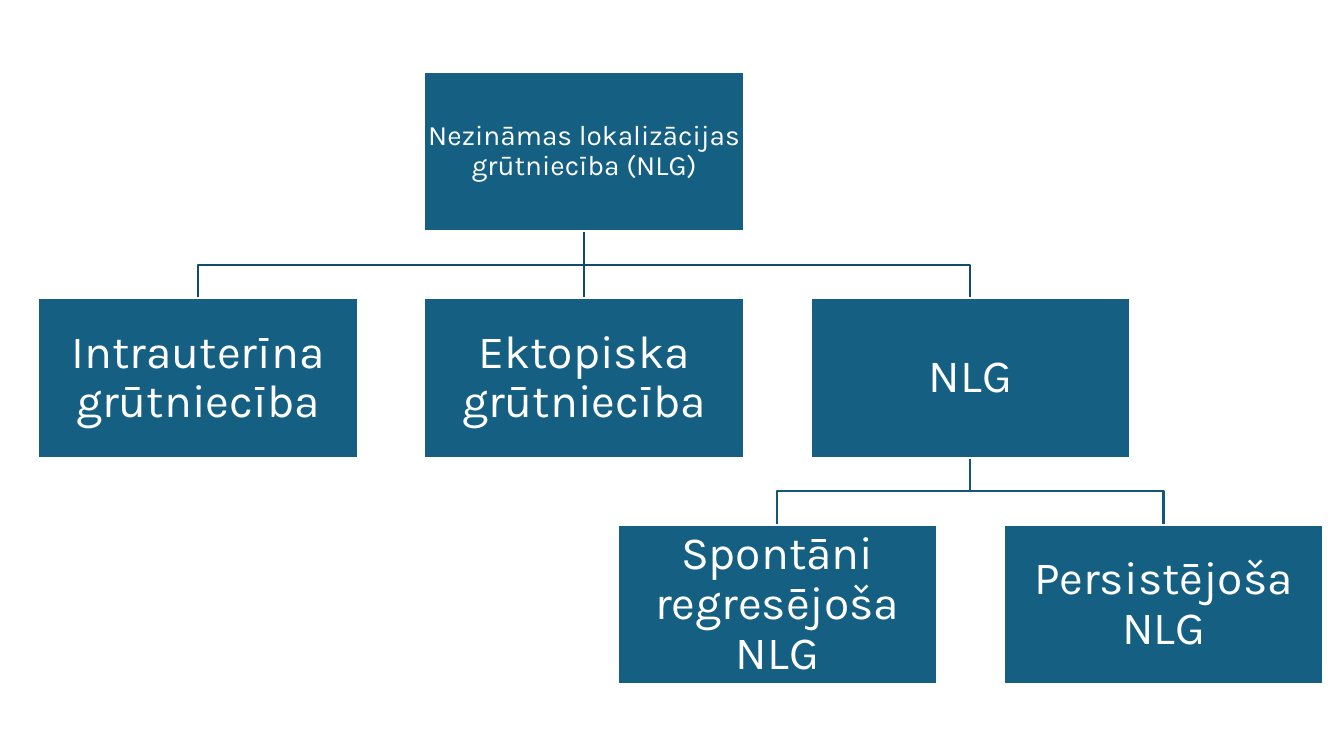
from dataclasses import dataclass

from lxml import etree
from pptx import Presentation
from pptx.dml.color import RGBColor
from pptx.enum import shapes, text
from pptx.oxml.ns import qn
from pptx.util import Inches, Pt


@dataclass(frozen=True)
class Theme:
    font: str = "Karla"
    box: RGBColor = RGBColor(0x15, 0x60, 0x82)
    white: RGBColor = RGBColor(0xFF, 0xFF, 0xFF)
    upper_line: RGBColor = RGBColor(0x11, 0x4D, 0x68)
    lower_line: RGBColor = RGBColor(0x13, 0x57, 0x76)
    root_size: int = 20
    node_size: int = 33
    line_width: float = 1.5


theme = Theme()
BOX_WIDTH, BOX_HEIGHT = 3.17, 1.58
LEFT, TOP = 0.38, 0.71
COLUMN_PITCH, ROW_PITCH = 3.83, 2.25

presentation = Presentation()
presentation.slide_width = Inches(13.33)
presentation.slide_height = Inches(7.5)
slide = presentation.slides.add_slide(presentation.slide_layouts[6])

# name: (label, column, row, type size, inset)
nodes = {
    "root": ("Nezināmas lokalizācijas grūtniecība (NLG)", 1, 0, theme.root_size, 0.01),
    "intrauterine": ("Intrauterīna grūtniecība", 0, 1, theme.node_size, 0.02),
    "ectopic": ("Ektopiska grūtniecība", 1, 1, theme.node_size, 0.02),
    "unknown": ("NLG", 2, 1, theme.node_size, 0.02),
    "regressing": ("Spontāni regresējoša NLG", 1.5, 2, theme.node_size, 0.02),
    "persisting": ("Persistējoša NLG", 2.5, 2, theme.node_size, 0.02),
}

boxes = {}
for name, (label, column, row, size, inset) in nodes.items():
    box = slide.shapes.add_shape(
        shapes.MSO_SHAPE.RECTANGLE,
        Inches(LEFT + column * COLUMN_PITCH), Inches(TOP + row * ROW_PITCH),
        Inches(BOX_WIDTH), Inches(BOX_HEIGHT),
    )
    box.shadow.inherit = False
    box.fill.solid()
    box.fill.fore_color.rgb = theme.box
    box.line.color.rgb = theme.white
    box.line.width = Pt(theme.line_width)
    frame = box.text_frame
    frame.word_wrap = True
    frame.vertical_anchor = text.MSO_ANCHOR.MIDDLE
    frame.margin_left = frame.margin_right = Inches(inset)
    frame.margin_top = frame.margin_bottom = Inches(inset)
    frame.text = label
    paragraph = frame.paragraphs[0]
    paragraph.alignment = text.PP_ALIGN.CENTER
    paragraph.line_spacing = 0.9
    font = paragraph.runs[0].font
    font.name = theme.font
    font.size = Pt(size)
    font.color.rgb = theme.white
    boxes[name] = box

branches = [
    ("unknown", "persisting", theme.lower_line),
    ("unknown", "regressing", theme.lower_line),
    ("root", "unknown", theme.upper_line),
    ("root", "ectopic", theme.upper_line),
    ("root", "intrauterine", theme.upper_line),
]
for parent_name, child_name, color in branches:
    parent, child = boxes[parent_name], boxes[child_name]
    start_x = parent.left + parent.width // 2
    start_y = parent.top + parent.height
    end_x = child.left + child.width // 2
    if start_x == end_x:
        branch = slide.shapes.add_connector(
            shapes.MSO_CONNECTOR.STRAIGHT, start_x, start_y, end_x, child.top
        )
        branch.begin_connect(parent, 2)
        branch.end_connect(child, 0)
        etree.SubElement(branch.element.spPr, qn("a:effectLst"))
    else:
        middle_y = (start_y + child.top) // 2
        builder = slide.shapes.build_freeform(start_x, start_y)
        builder.add_line_segments(
            [(start_x, middle_y), (end_x, middle_y), (end_x, child.top)], close=False
        )
        branch = builder.convert_to_shape()
        branch.fill.background()
        branch.shadow.inherit = False
    branch.line.color.rgb = color
    branch.line.width = Pt(theme.line_width)
    # Lines lie behind the boxes, whose white borders trim the line ends.
    boxes["root"].element.addprevious(branch.element)

presentation.save("out.pptx")
